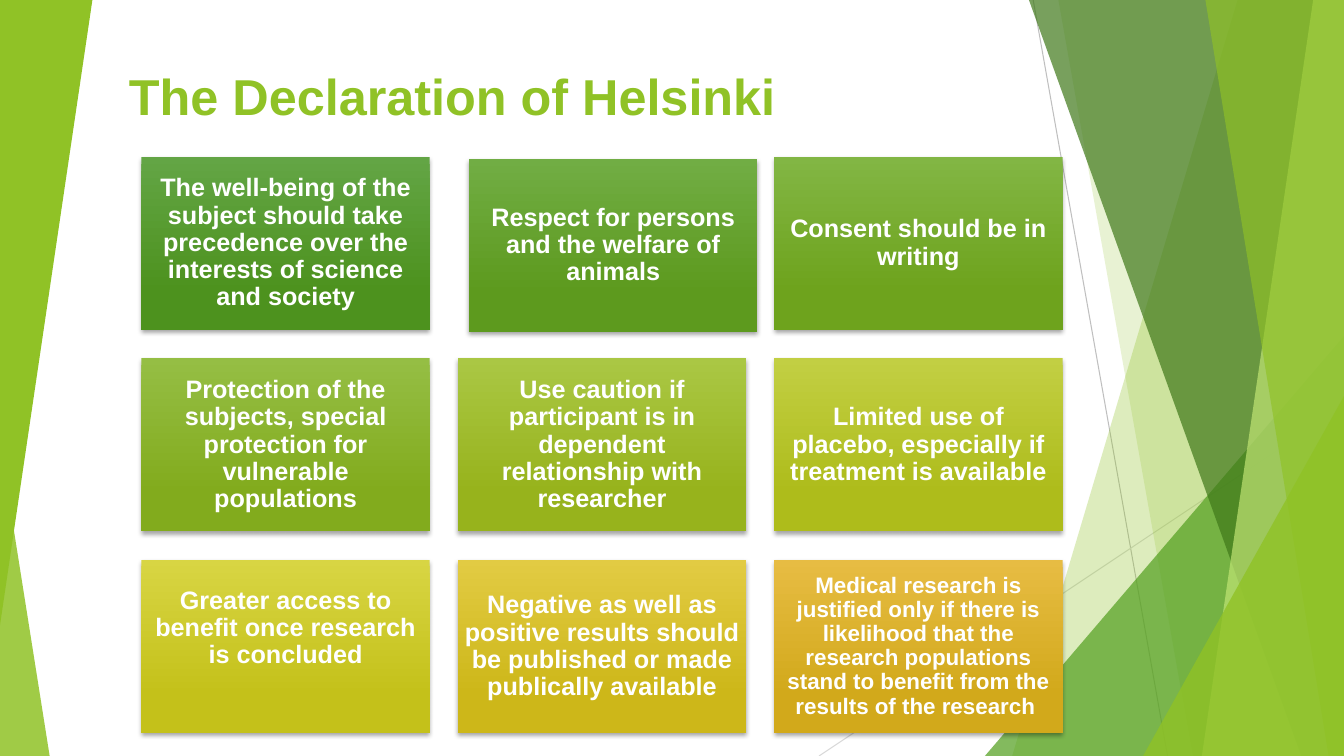
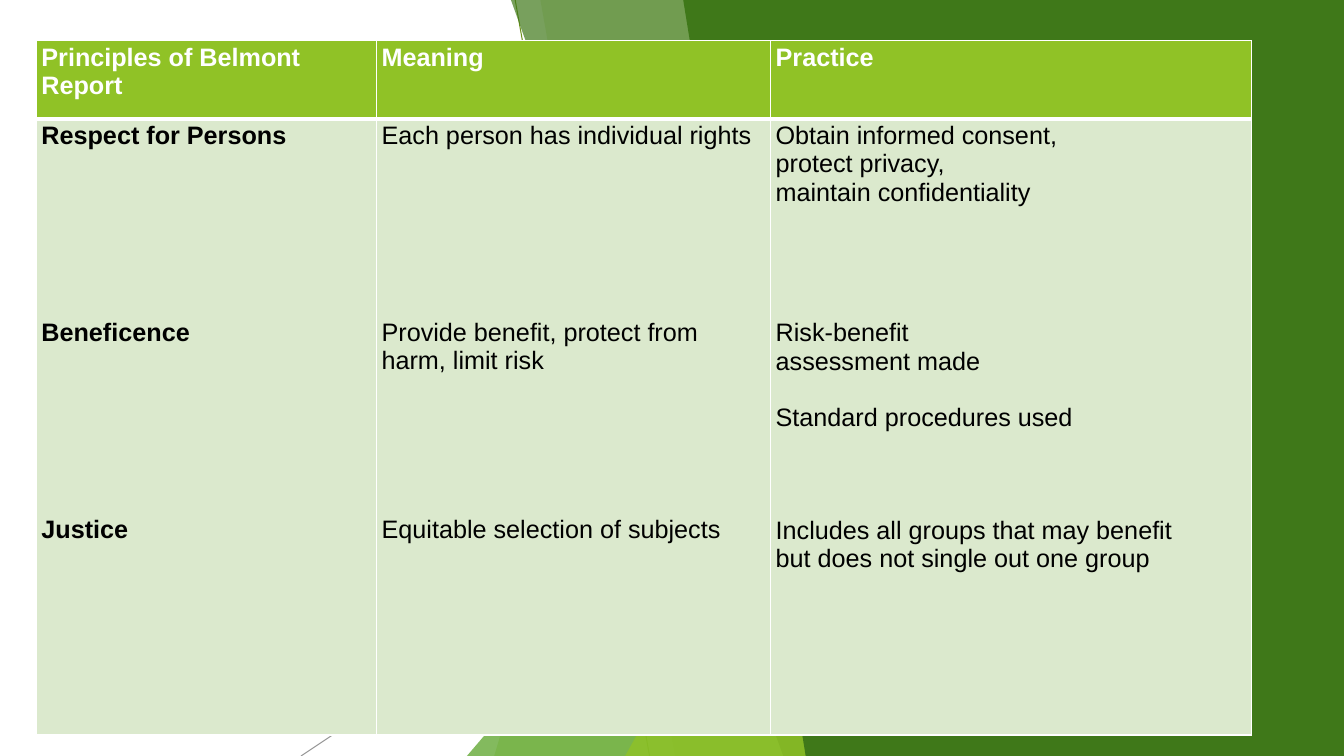
from lxml.etree import SubElement
from pptx import Presentation
from pptx.dml.color import RGBColor
from pptx.enum.shapes import MSO_CONNECTOR, MSO_SHAPE
from pptx.enum.text import MSO_ANCHOR, PP_ALIGN
from pptx.oxml.ns import qn
from pptx.util import Pt

W, H = 960, 540
FONT = "Arial"
LINE_HEIGHT = 20.1
COLORS = {
    "lime": "90C226", "green": "54A021", "dark": "3F7819", "pale": "C0E474",
    "light_gray": "BFBFBF", "lighter_gray": "D9D9D9", "gray": "808080",
    "olive": "6C921D", "mint": "DBE9CD", "white": "FFFFFF", "black": "000000",
}

# text, top colour, bottom colour
TILES = [
    ("The well-being of the subject should take precedence over the "
     "interests of science and society", "63A545", "4D921E"),
    ("Respect for persons and the welfare of animals", "71AD44", "5D9A1E"),
    ("Consent should be in writing", "82B644", "6EA31D"),
    ("Protection of the subjects, special protection for vulnerable "
     "populations", "95BE44", "82AB1D"),
    ("Use caution if participant is in dependent relationship with "
     "researcher", "AAC744", "97B31C"),
    ("Limited use of placebo, especially if treatment is available",
     "C2CF43", "AEBC1B"),
    ("Greater access to benefit once research is concluded",
     "D8D543", "C4C11A"),
    ("Negative as well as positive results should be published or made "
     "publically available", "E2CB43", "CDB719"),
    ("Medical research is justified only if there is likelihood that the "
     "research populations stand to benefit from the results of the "
     "research ", "E7BC43", "D2A91B"),
]
RAISED, SMALL, NUDGED = 6, 8, 1

COLUMN_WIDTHS = [243, 281.5, 343.5]
ROW_HEIGHTS = [56, 440]
HEADERS = ["Principles of Belmont Report", "Meaning", "Practice"]
# text, lines left free above it
BODY = [
    [("Respect for Persons", 0), ("Beneficence", 6), ("Justice", 6)],
    [("Each person has individual rights", 0),
     ("Provide benefit, protect from", 6), ("harm, limit risk", 0),
     ("Equitable selection of subjects", 5)],
    [("Obtain informed consent,", 0), ("protect privacy,", 0),
     ("maintain confidentiality", 0), ("Risk-benefit", 4),
     ("assessment made", 0), ("Standard procedures used", 1),
     ("Includes all groups that may benefit", 3),
     ("but does not single out one group", 0)],
]


def rgb(name):
    return RGBColor.from_string(COLORS.get(name, name))


def set_alpha(fill_owner, percent):
    """Make the solid colour inside a spPr or a:ln partly transparent."""
    color = fill_owner.find(qn("a:solidFill")).find(qn("a:srgbClr"))
    SubElement(color, qn("a:alpha"), val=str(percent * 1000))


def paint(sp, color, alpha=100):
    sp.shadow.inherit = False
    sp.fill.solid()
    sp.fill.fore_color.rgb = rgb(color)
    sp.line.fill.background()
    if alpha < 100:
        set_alpha(sp._element.spPr, alpha)


def add_line(s, x1, y1, x2, y2, color, alpha=100):
    line = s.shapes.add_connector(MSO_CONNECTOR.STRAIGHT,
                                  Pt(x1), Pt(y1), Pt(x2), Pt(y2))
    line.line.color.rgb = rgb(color)
    line.line.width = Pt(0.75)
    spPr = line._element.spPr
    if alpha < 100:
        set_alpha(spPr.find(qn("a:ln")), alpha)
    SubElement(spPr, qn("a:effectLst"))


def add_facet(s, top, bottom, right, color, alpha=100):
    """Full-height panel with a slanted left edge."""
    points = [(right, 0), (right, H), (bottom, H)]
    builder = s.shapes.build_freeform(Pt(top), 0, scale=1.0)
    builder.add_line_segments([(Pt(x), Pt(y)) for x, y in points], close=True)
    paint(builder.convert_to_shape(), color, alpha)


def add_triangle(s, x, y, w, h, apex, color, alpha=100, rotation=0):
    sp = s.shapes.add_shape(MSO_SHAPE.ISOSCELES_TRIANGLE,
                            Pt(x), Pt(y), Pt(w), Pt(h))
    sp.adjustments[0] = apex
    sp.rotation = rotation
    paint(sp, color, alpha)


def add_facets(s, right, line1, line2, line2_alpha=100):
    """Facets common to both slides, ending at the given right edge."""
    dx = right - W
    add_line(s, 738 + dx, 0, 834 + dx, H, line1)
    add_line(s, right, 290, 585 + dx, H, line2, line2_alpha)
    add_facet(s, 884 + dx, 723 + dx, right, "lime", 30)
    add_facet(s, 756 + dx, 852 + dx, right, "lime", 20)
    add_triangle(s, 703.5 + dx, 240, 256.5, 300, 1, "green", 72)
    add_facet(s, 735 + dx, 929.5 + dx, right, "dark", 70)


def add_front_triangle(s, right):
    add_triangle(s, right - 143.5, 283, 143.5, 257, 1, "lime", 80)


def add_run(p, text, size, color, bold):
    r = p.add_run()
    r.text = text
    r.font.name = FONT
    r.font.size = Pt(size)
    r.font.bold = bold
    r.font.color.rgb = rgb(color)


def add_title(s, text):
    tf = s.shapes.add_textbox(Pt(85), Pt(48), Pt(705), Pt(52)).text_frame
    tf.word_wrap = True
    p = tf.paragraphs[0]
    p.line_spacing = 0.9
    add_run(p, text, 36, "lime", True)


def add_tile_shadow(sp):
    sp.shadow.inherit = False
    effects = sp._element.spPr.find(qn("a:effectLst"))
    shadow = SubElement(effects, qn("a:outerShdw"), blurRad=str(Pt(3)),
                        dist=str(Pt(2)), dir="5400000", rotWithShape="0")
    color = SubElement(shadow, qn("a:srgbClr"), val=COLORS["black"])
    SubElement(color, qn("a:alpha"), val="35000")


def add_tile(s, x, y, text, colors, size=18, bottom_inset=5):
    sp = s.shapes.add_shape(MSO_SHAPE.RECTANGLE, Pt(x), Pt(y),
                            Pt(206), Pt(123.5))
    sp.line.fill.background()
    sp.fill.gradient()
    sp.fill.gradient_angle = 270
    for stop, color, position in zip(sp.fill.gradient_stops, colors, (0, 0.78)):
        stop.color.rgb = rgb(color)
        stop.position = position
    add_tile_shadow(sp)
    tf = sp.text_frame
    tf.word_wrap = True
    tf.vertical_anchor = MSO_ANCHOR.MIDDLE
    tf.margin_left = tf.margin_right = tf.margin_top = Pt(5)
    tf.margin_bottom = Pt(bottom_inset)
    p = tf.paragraphs[0]
    p.alignment = PP_ALIGN.CENTER
    p.line_spacing = 0.9
    add_run(p, text, size, "white", True)


def set_borders(cell, bottom):
    tcPr = cell._tc.get_or_add_tcPr()
    for side, width in (("L", 1), ("R", 1), ("T", 1), ("B", bottom)):
        ln = SubElement(tcPr, qn("a:ln" + side), w=str(Pt(width)))
        fill = SubElement(ln, qn("a:solidFill"))
        SubElement(fill, qn("a:srgbClr"), val=COLORS["white"])


def fill_cell(cell, lines, fill, color, bold, bottom=1):
    set_borders(cell, bottom)
    cell.fill.solid()
    cell.fill.fore_color.rgb = rgb(fill)
    cell.margin_left = cell.margin_right = Pt(3.6)
    cell.margin_top = cell.margin_bottom = Pt(2)
    tf = cell.text_frame
    for i, (text, free_lines) in enumerate(lines):
        p = tf.add_paragraph() if i else tf.paragraphs[0]
        p.space_before = Pt(free_lines * LINE_HEIGHT)
        add_run(p, text, 18, color, bold)


def add_principles_table(s):
    table = s.shapes.add_table(2, 3, Pt(26), Pt(29), Pt(sum(COLUMN_WIDTHS)),
                               Pt(sum(ROW_HEIGHTS))).table
    table.horz_banding = False
    for row, height in zip(table.rows, ROW_HEIGHTS):
        row.height = Pt(height)
    for i, width in enumerate(COLUMN_WIDTHS):
        table.columns[i].width = Pt(width)
        fill_cell(table.cell(0, i), [(HEADERS[i], 0)], "lime", "white", True, 3)
        fill_cell(table.cell(1, i), BODY[i], "mint", "black", i == 0)


def build_helsinki(s):
    add_facets(s, W, "light_gray", "lighter_gray")
    add_facet(s, 938, 858.5, W, "pale", 70)
    add_facet(s, 861, 949, W, "lime", 65)
    add_front_triangle(s, W)
    add_triangle(s, 0, 316, 35.5, 224, 0, "lime", 85)
    add_triangle(s, 0, 0, 66, 446.5, 1, "lime", rotation=180)
    add_title(s, "The Declaration of Helsinki")
    for i, (text, *colors) in enumerate(TILES):
        row, col = divmod(i, 3)
        dx, dy = (8, 1.5) if i == NUDGED else (0, 0)
        add_tile(s, 101 + col * 226 + dx, 112 + row * 144 + dy, text, colors,
                 size=16 if i == SMALL else 18,
                 bottom_inset=31 if i == RAISED else 5)


def build_belmont(s):
    right = 590
    add_facets(s, right, "olive", "gray", 80)
    add_front_triangle(s, right)
    add_facet(s, 488, 575.5, W, "dark")
    add_principles_table(s)


def main():
    prs = Presentation()
    prs.slide_width, prs.slide_height = Pt(W), Pt(H)
    for build in (build_helsinki, build_belmont):
        build(prs.slides.add_slide(prs.slide_layouts[6]))
    prs.save("out.pptx")


if __name__ == "__main__":
    main()
